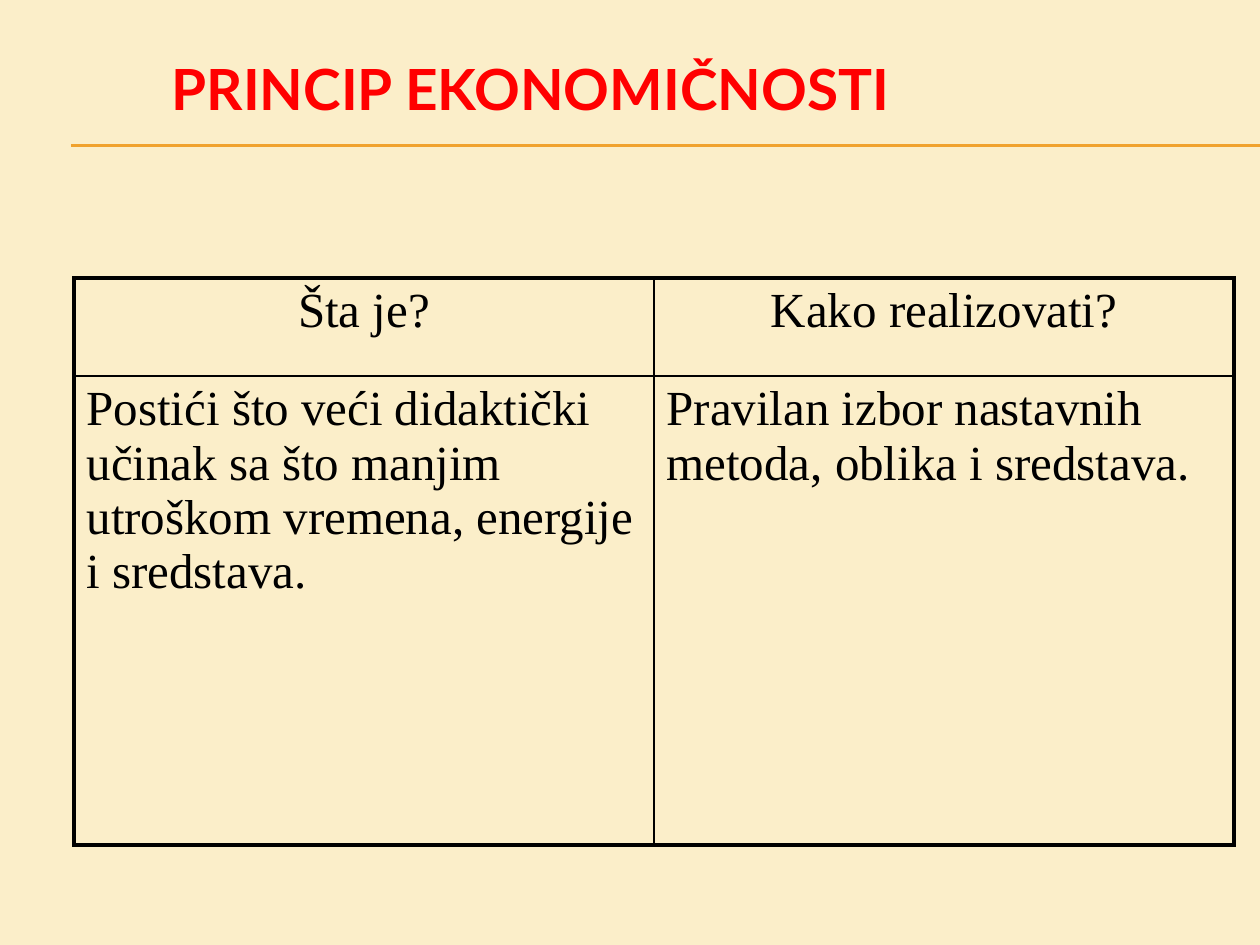
from dataclasses import dataclass

from pptx import Presentation
from pptx.dml.color import RGBColor as Rgb
from pptx.enum.shapes import MSO_CONNECTOR as Connector
from pptx.enum.text import MSO_ANCHOR as Anchor, MSO_AUTO_SIZE as AutoSize, PP_ALIGN as Align
from pptx.oxml.ns import qn
from pptx.util import Pt
from lxml.etree import SubElement

EMU_PER_PX = 914400 / 126


def px(length):
    return round(length * EMU_PER_PX)


@dataclass(frozen=True)
class Theme:
    background: str = "FBEEC9"
    heading: str = "FF0000"
    rule: str = "F0A22E"
    ink: str = "000000"
    heading_font: str = "Lato"
    body_font: str = "Times New Roman"
    heading_size: float = 32.4
    body_size: float = 28
    rule_width: float = 0.75
    outer_border: float = 2.25
    inner_border: float = 1


class SlideBuilder:
    def __init__(self, deck, theme):
        self.theme = theme
        self.slide = deck.slides.add_slide(deck.slide_layouts[5])
        fill = self.slide.background.fill
        fill.solid()
        fill.fore_color.rgb = Rgb.from_string(theme.background)

    def text_run(self, paragraph, text, font, size, color, bold=False):
        run = paragraph.add_run()
        run.text = text
        run.font.name = font
        run.font.size = Pt(size)
        run.font.bold = bold
        run.font.color.rgb = Rgb.from_string(color)

    def title(self, text, left, top, width, height):
        heading = self.slide.shapes.title
        heading.left, heading.top = px(left), px(top)
        heading.width, heading.height = px(width), px(height)
        frame = heading.text_frame
        frame.auto_size = AutoSize.NONE
        frame.word_wrap = True
        frame.vertical_anchor = Anchor.MIDDLE
        paragraph = frame.paragraphs[0]
        paragraph.alignment = Align.LEFT
        theme = self.theme
        self.text_run(paragraph, text, theme.heading_font, theme.heading_size, theme.heading, True)

    def rule(self, left, right, y):
        line = self.slide.shapes.add_connector(
            Connector.STRAIGHT, px(left), px(y), px(right), px(y))
        line.line.color.rgb = Rgb.from_string(self.theme.rule)
        line.line.width = Pt(self.theme.rule_width)
        SubElement(line._element.spPr, qn("a:effectLst"))

    def border(self, cell, side, width):
        edge = SubElement(cell._tc.get_or_add_tcPr(), qn(f"a:ln{side}"), w=str(Pt(width)))
        fill = SubElement(edge, qn("a:solidFill"))
        SubElement(fill, qn("a:srgbClr"), val=self.theme.ink)

    def table(self, rows, left, top, column_width, row_heights):
        theme = self.theme
        last_row, last_column = len(rows) - 1, len(rows[0]) - 1
        table = self.slide.shapes.add_table(
            len(rows), len(rows[0]), px(left), px(top),
            px(column_width * len(rows[0])), px(sum(row_heights))).table
        table.first_row = table.horz_banding = False
        for column in table.columns:
            column.width = px(column_width)
        for r, (texts, height) in enumerate(zip(rows, row_heights)):
            table.rows[r].height = px(height)
            for c, text in enumerate(texts):
                cell = table.cell(r, c)
                outer_sides = {"L": c == 0, "R": c == last_column,
                               "T": r == 0, "B": r == last_row}
                for side, outer in outer_sides.items():
                    self.border(cell, side, theme.outer_border if outer else theme.inner_border)
                cell.fill.background()
                paragraph = cell.text_frame.paragraphs[0]
                paragraph.alignment = Align.CENTER if r == 0 else Align.LEFT
                self.text_run(paragraph, text, theme.body_font, theme.body_size, theme.ink)


def main():
    deck = Presentation()
    deck.slide_width, deck.slide_height = px(1260), px(945)
    principle = SlideBuilder(deck, Theme())
    for y in (145, 146):
        principle.rule(71, 1260, y)
    principle.title("PRINCIP EKONOMIČNOSTI", 159, 29, 1074, 117)
    principle.table(
        [
            ("Šta je?", "Kako realizovati?"),
            ("Postići što veći didaktički učinak sa što manjim utroškom vremena, "
             "energije i sredstava.",
             "Pravilan izbor nastavnih metoda, oblika i sredstava."),
        ],
        left=74, top=278, column_width=580, row_heights=(98, 469))
    deck.save("out.pptx")


if __name__ == "__main__":
    main()
